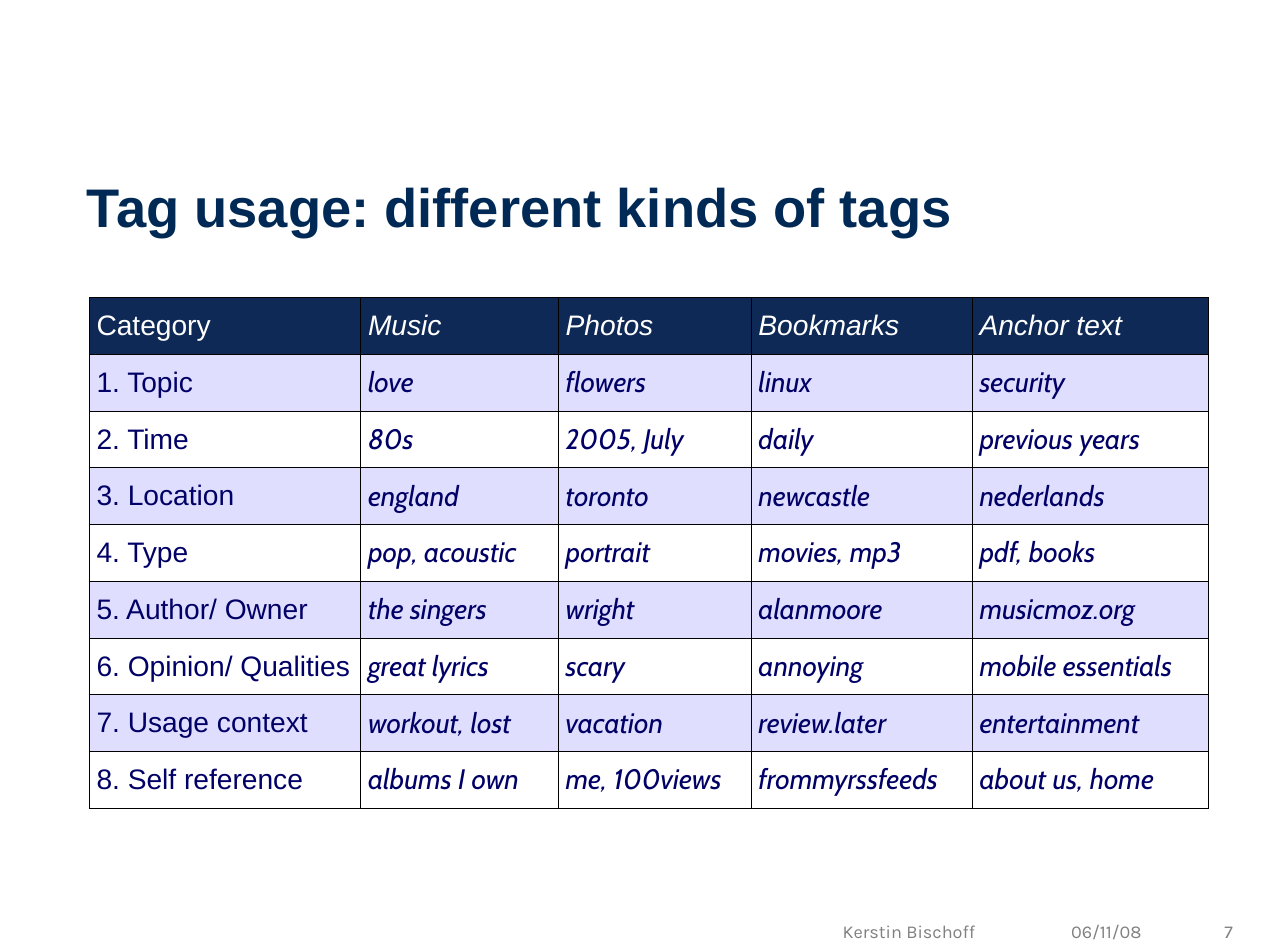
import lxml.etree
import pptx
import pptx.dml.color
import pptx.enum.text
import pptx.oxml.ns
import pptx.util

Cm = pptx.util.Cm
Pt = pptx.util.Pt
RGBColor = pptx.dml.color.RGBColor
Align = pptx.enum.text.PP_ALIGN
Anchor = pptx.enum.text.MSO_ANCHOR

NAVY = RGBColor(0x00, 0x2A, 0x55)
HEAD = RGBColor(0x0E, 0x29, 0x56)
INK = RGBColor(0x00, 0x00, 0x66)
BAND = RGBColor(0xE0, 0xDE, 0xFE)
WHITE = RGBColor(0xFF, 0xFF, 0xFF)
BLACK = RGBColor(0x00, 0x00, 0x00)
GREY = RGBColor(0x80, 0x80, 0x80)

COLS = (9.52, 6.93, 6.76, 7.75, 8.28)
ROWS = (
    ("Category", "Music", "Photos", "Bookmarks", "Anchor text"),
    ("1. Topic", "love", "flowers", "linux", "security"),
    ("2. Time", "80s", "2005, July", "daily", "previous years"),
    ("3. Location", "england", "toronto", "newcastle", "nederlands"),
    ("4. Type", "pop, acoustic", "portrait", "movies, mp3", "pdf, books"),
    ("5. Author/ Owner", "the singers", "wright", "alanmoore", "musicmoz.org"),
    ("6. Opinion/ Qualities", "great lyrics", "scary", "annoying", "mobile essentials"),
    ("7. Usage context", "workout, lost", "vacation", "review.later", "entertainment"),
    ("8. Self reference", "albums I own", "me, 100views", "frommyrssfeeds", "about us, home"),
)


def write(frame, text, size, color, font="Arial", bold=False, italic=False, align=Align.LEFT):
    para = frame.paragraphs[0]
    para.alignment = align
    run = para.add_run()
    run.text = text
    run.font.name = font
    run.font.size = Pt(size)
    run.font.bold = bold
    run.font.italic = italic
    run.font.color.rgb = color


def label(slide, box, text, anchor=Anchor.TOP, **style):
    frame = slide.shapes.add_textbox(*map(Cm, box)).text_frame
    frame.word_wrap = True
    frame.vertical_anchor = anchor
    frame.margin_left = frame.margin_right = Cm(0.43)
    frame.margin_top = frame.margin_bottom = Cm(0.23)
    write(frame, text, **style)


def border(cell):
    props = cell._tc.get_or_add_tcPr()
    for side in ("lnL", "lnR", "lnT", "lnB"):
        line = lxml.etree.SubElement(props, pptx.oxml.ns.qn("a:" + side), w=str(Pt(1)))
        fill = lxml.etree.SubElement(line, pptx.oxml.ns.qn("a:solidFill"))
        lxml.etree.SubElement(fill, pptx.oxml.ns.qn("a:srgbClr"), val=str(BLACK))


def grid(slide, box):
    """Table of tag categories, its columns in the ratio of COLS."""
    left, top, width, height = box
    frame = slide.shapes.add_table(len(ROWS), len(COLS), *map(Cm, box))
    table = frame.table
    table.first_row = table.horz_banding = False
    for col, part in zip(table.columns, COLS):
        col.width = Cm(width * part / sum(COLS))
    for r, texts in enumerate(ROWS):
        table.rows[r].height = Cm(height / len(ROWS))
        for c, text in enumerate(texts):
            cell = table.cell(r, c)
            cell.vertical_anchor = Anchor.MIDDLE
            border(cell)
            cell.fill.solid()
            cell.fill.fore_color.rgb = HEAD if r == 0 else BAND if r % 2 else WHITE
            write(cell.text_frame, text, size=28, color=INK if r else WHITE,
                  font="Cabin" if r and c else "Arial", italic=c > 0)


def footer(slide, box):
    """Author, date and page number, each flush right at its own edge."""
    left, top, width, height = box
    for text, start, span in (("Kerstin Bischoff", 0, 15.42),
                              ("06/11/08", 14.48, 6.78),
                              ("7", 19.76, 4.7)):
        label(slide, (left + start, top, span, height), text,
              size=18, color=GREY, font="Karla", align=Align.RIGHT)


def main():
    deck = pptx.Presentation()
    deck.slide_width, deck.slide_height = Cm(45.16), Cm(33.17)
    slide = deck.slides.add_slide(deck.slide_layouts[6])
    label(slide, (2.62, 5.84, 41.4, 2.74), "Tag usage: different kinds of tags",
          anchor=Anchor.MIDDLE, size=54, color=NAVY, bold=True)
    grid(slide, (3.13, 10.44, 39.24, 17.9))
    footer(slide, (19.2, 32.05, 24.46, 1.12))
    deck.save("out.pptx")


if __name__ == "__main__":
    main()
